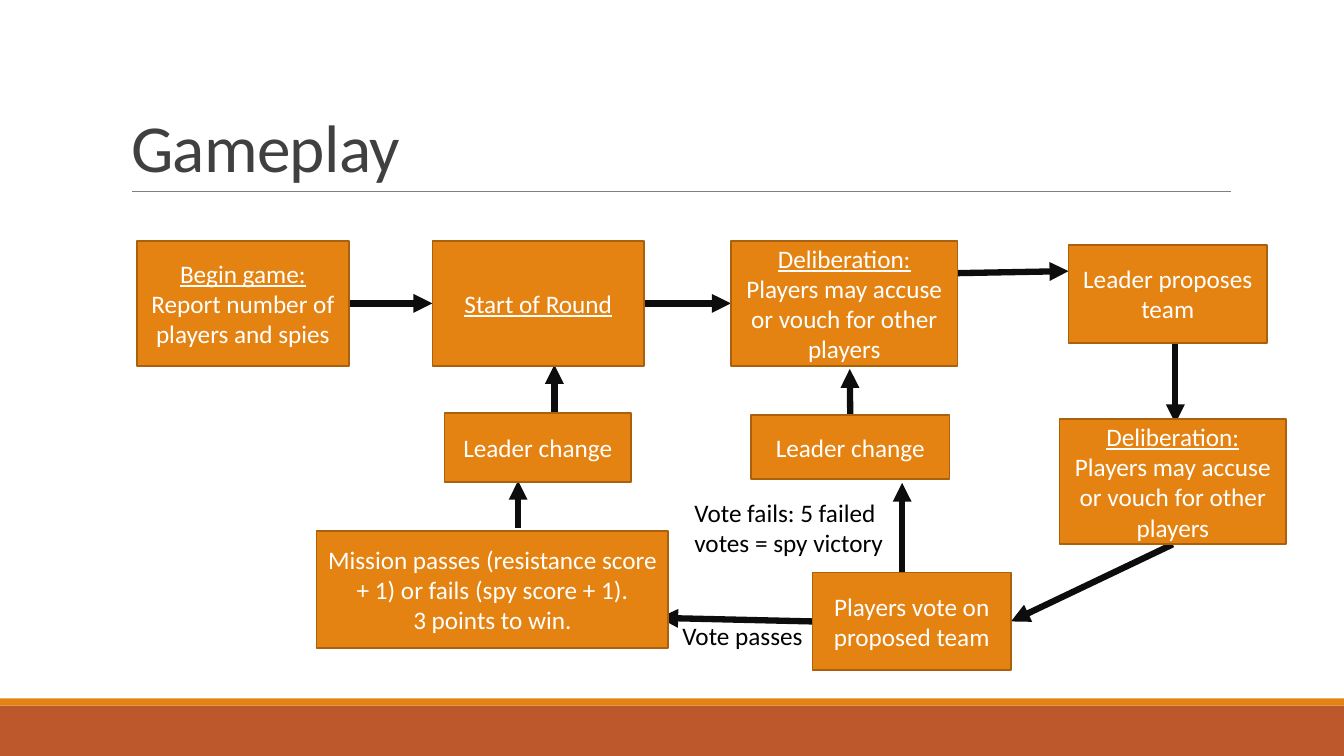
from dataclasses import dataclass
from typing import Optional

from lxml import etree
from pptx import Presentation
from pptx.dml.color import RGBColor
from pptx.enum.shapes import MSO_CONNECTOR, MSO_SHAPE
from pptx.enum.text import MSO_ANCHOR, MSO_AUTO_SIZE, PP_ALIGN
from pptx.oxml.ns import qn
from pptx.util import Inches, Pt

RECT = MSO_SHAPE.RECTANGLE
STRAIGHT = MSO_CONNECTOR.STRAIGHT
LEFT, CENTER = PP_ALIGN.LEFT, PP_ALIGN.CENTER
TOP, MIDDLE, BOTTOM = MSO_ANCHOR.TOP, MSO_ANCHOR.MIDDLE, MSO_ANCHOR.BOTTOM
NO_FIT, FIT = MSO_AUTO_SIZE.NONE, MSO_AUTO_SIZE.SHAPE_TO_FIT_TEXT

ORANGE = RGBColor(0xE4, 0x83, 0x12)
BROWN = RGBColor(0xA9, 0x61, 0x0D)
RUST = RGBColor(0xBD, 0x58, 0x2C)
INK = RGBColor(0x0D, 0x0D, 0x0D)
SLATE = RGBColor(0x40, 0x40, 0x40)
GRAY = RGBColor(0x80, 0x80, 0x80)
WHITE = RGBColor(0xFF, 0xFF, 0xFF)
BLACK = RGBColor(0, 0, 0)
FONT = "Calibri"

# Grid: ten columns or rows to the inch
COLS, ROWS = 133.33, 75
N_SIDE, W_SIDE, S_SIDE, E_SIDE = range(4)
Join = tuple[str, int]
Spot = tuple[float, float]


def cell(n: float) -> int:
    return Inches(n / 10)


@dataclass
class Box:
    name: str
    col: float
    row: float
    wide: float
    high: float
    body: str = ""
    head: str = ""


@dataclass
class Arrow:
    start: Spot
    end: Spot
    tail: Optional[Join] = None
    tip: Optional[Join] = None


@dataclass
class Label:
    col: float
    row: float
    wide: float
    high: float
    text: str
    wrap: bool


ACCUSE = "Players may accuse or vouch for other players"
TALK = "Deliberation:"
CHANGE = "Leader change"

BOXES = [
    Box("begin", 13.6, 23.9, 21, 12.4, "Report number of players and spies", "Begin game:"),
    Box("round", 42.9, 23.9, 21, 12.4, head="Start of Round"),
    Box("talk", 72.5, 23.9, 22.5, 12.4, ACCUSE, TALK),
    Box("team", 106, 24.3, 19.7, 9.7, "Leader proposes team"),
    Box("debate", 105.1, 41.6, 22.5, 12.4, ACCUSE, TALK),
    Box("vote", 80.6, 56.8, 19.7, 9.7, "Players vote on proposed team"),
    Box("result", 31.4, 52.7, 34.9, 11.6,
        "Mission passes (resistance score + 1) or fails (spy score + 1).\n3 points to win."),
    Box("next", 44.1, 41, 18.5, 6.8, CHANGE),
    Box("retry", 74.5, 41.2, 19.7, 6.3, CHANGE),
]

ARROWS = [
    Arrow((34.6, 30.1), (42.9, 30.1), ("begin", E_SIDE), ("round", W_SIDE)),
    Arrow((63.9, 30.1), (72.5, 30.1), ("round", E_SIDE), ("talk", W_SIDE)),
    Arrow((94.9, 27.1), (106, 26.9)),
    Arrow((116.6, 34.1), (116.6, 42)),
    Arrow((116.3, 54), (100.3, 61.6), ("debate", S_SIDE), ("vote", E_SIDE)),
    Arrow((80.6, 61.6), (65.4, 61.3), ("vote", W_SIDE)),
    Arrow((51.4, 52.4), (51.4, 47.7)),
    Arrow((89.5, 56.8), (89.5, 47.9)),
    Arrow((84.3, 41.2), (84.3, 36.6), ("retry", N_SIDE)),
    Arrow((55, 40.9), (55, 36.2)),
]

LABELS = [
    Label(66.7, 61.1, 14.1, 4, "Vote passes", False),
    Label(67.9, 48.8, 22.5, 7.1, "Vote fails: 5 failed votes = spy victory", True),
]


def add_run(para, text: str, size: float, color: RGBColor, under: bool = False):
    run = para.add_run()
    run.text = text
    font = run.font
    font.name, font.size, font.underline = FONT, Pt(size), under
    font.color.rgb = color
    return run


def add_rect(slide, box: Box, fill: RGBColor, edge: Optional[RGBColor] = None):
    rect = slide.shapes.add_shape(
        RECT, cell(box.col), cell(box.row), cell(box.wide), cell(box.high))
    rect.shadow.inherit = False
    rect.fill.solid()
    rect.fill.fore_color.rgb = fill
    if edge is None:
        rect.line.fill.background()
    else:
        rect.line.color.rgb = edge
        rect.line.width = Pt(1.25)
    return rect


def add_line(slide, start: Spot, end: Spot, color: RGBColor, width: float):
    line = slide.shapes.add_connector(STRAIGHT, *map(cell, start + end))
    line.line.color.rgb = color
    line.line.width = Pt(width)
    etree.SubElement(line._element.spPr, qn("a:effectLst"))
    return line


def add_arrow(slide, arrow: Arrow):
    line = add_line(slide, arrow.start, arrow.end, INK, 4.5)
    etree.SubElement(line.line._get_or_add_ln(), qn("a:tailEnd"), type="triangle")
    return line


def add_box(slide, box: Box):
    rect = add_rect(slide, box, ORANGE, BROWN)
    frame = rect.text_frame
    frame.word_wrap, frame.vertical_anchor = True, MIDDLE
    texts = [(box.head, True)] + [(text, False) for text in box.body.split("\n")]
    for i, (text, under) in enumerate(pair for pair in texts if pair[0]):
        para = frame.add_paragraph() if i else frame.paragraphs[0]
        para.alignment = CENTER
        add_run(para, text, 18, WHITE, under)
    return rect


def add_label(slide, label: Label) -> None:
    area = slide.shapes.add_textbox(
        cell(label.col), cell(label.row), cell(label.wide), cell(label.high))
    frame = area.text_frame
    frame.word_wrap, frame.auto_size, frame.vertical_anchor = label.wrap, FIT, TOP
    add_run(frame.paragraphs[0], label.text, 18, BLACK)


def set_title(slide, text: str) -> None:
    title = slide.shapes.title
    title.left, title.top = cell(12), cell(3.1)
    title.width, title.height = cell(110), cell(15.9)
    frame = title.text_frame
    frame.auto_size, frame.vertical_anchor = NO_FIT, BOTTOM
    para = frame.paragraphs[0]
    para.alignment, para.line_spacing = LEFT, 0.85
    run = add_run(para, text, 48, SLATE)
    run.font._element.set("spc", "-50")


def main() -> None:
    deck = Presentation()
    deck.slide_width, deck.slide_height = cell(COLS), cell(ROWS)
    slide = deck.slides.add_slide(deck.slide_layouts[5])

    # Title, rule and bottom bars
    set_title(slide, "Gameplay")
    add_rect(slide, Box("base", 0, 70, COLS, 5), RUST)
    add_rect(slide, Box("band", 0, 69.3, COLS, 0.7), ORANGE)
    add_line(slide, (13.1, 19), (122.1, 19), GRAY, 0.5)

    # Flow: arrows lie behind the boxes
    lines = [add_arrow(slide, arrow) for arrow in ARROWS]
    rects = {box.name: add_box(slide, box) for box in BOXES}
    for arrow, line in zip(ARROWS, lines):
        if arrow.tail:
            line.begin_connect(rects[arrow.tail[0]], arrow.tail[1])
        if arrow.tip:
            line.end_connect(rects[arrow.tip[0]], arrow.tip[1])

    # Vote outcomes
    for label in LABELS:
        add_label(slide, label)
    deck.save("out.pptx")


if __name__ == "__main__":
    main()
